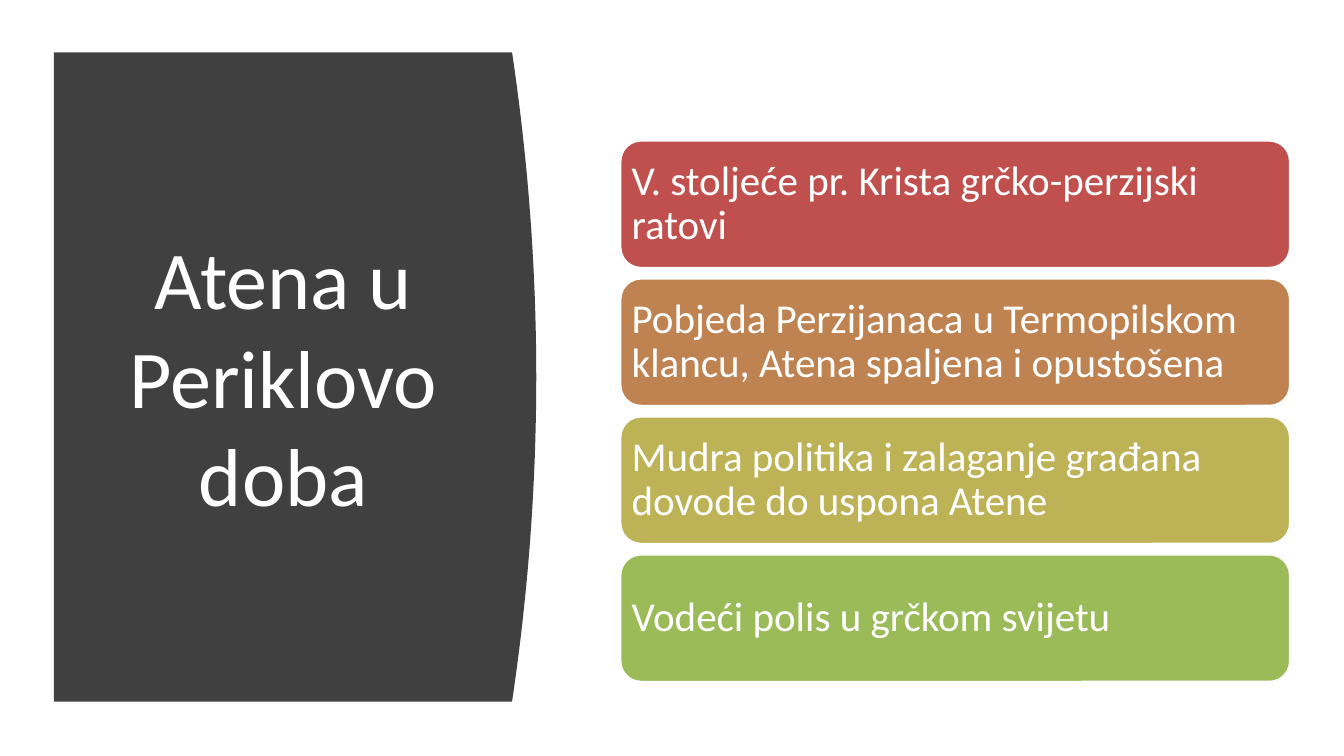
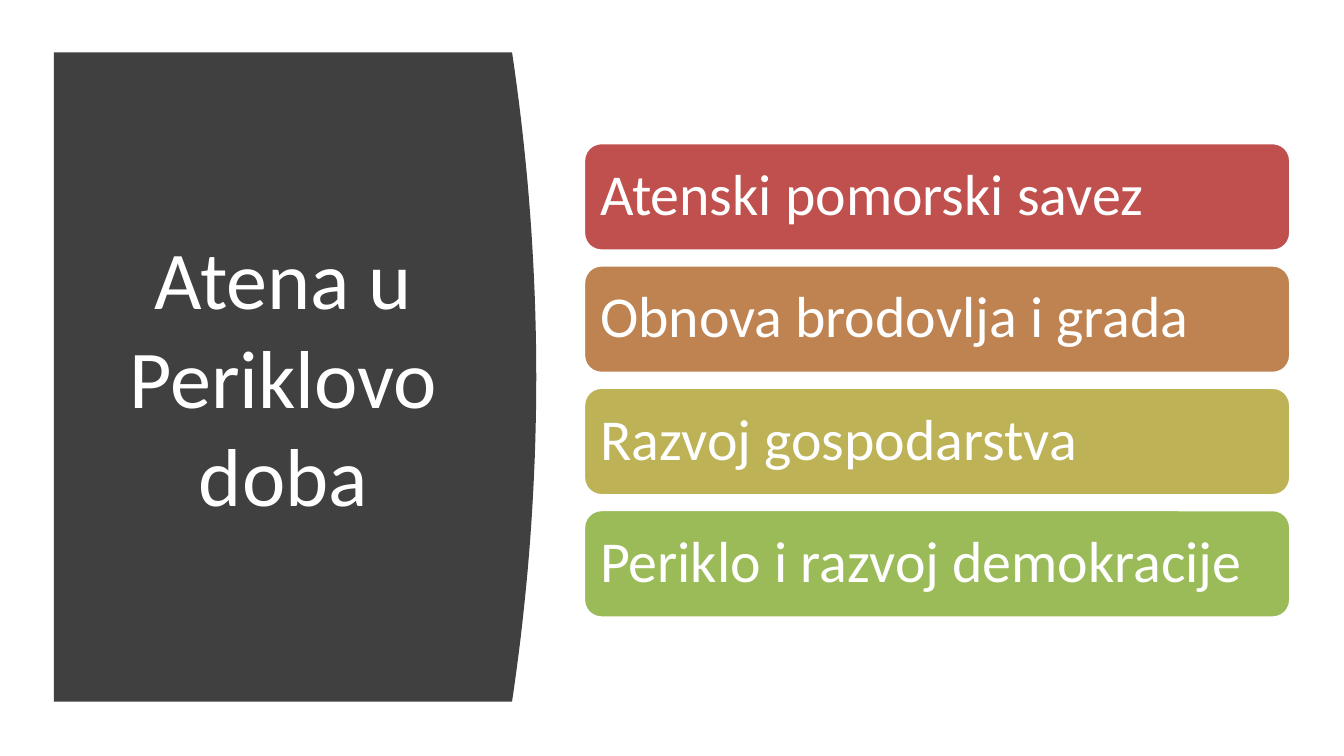
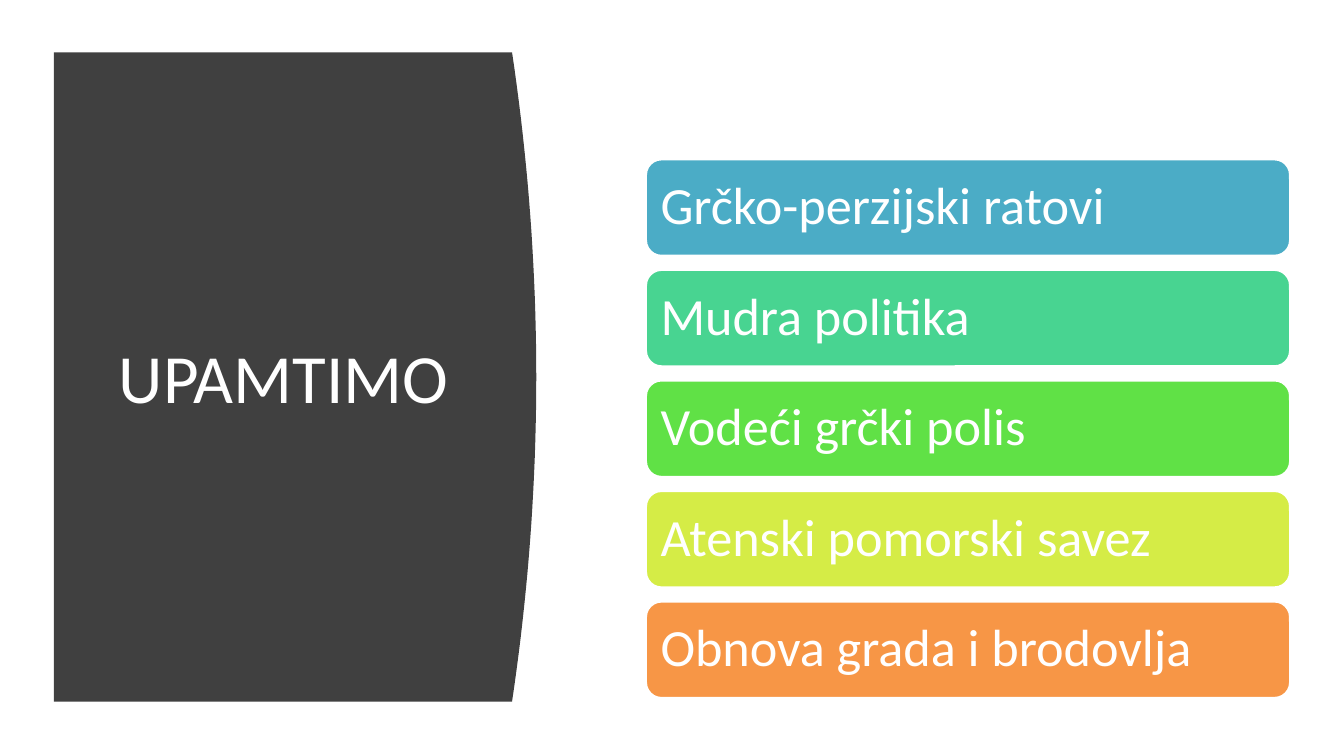
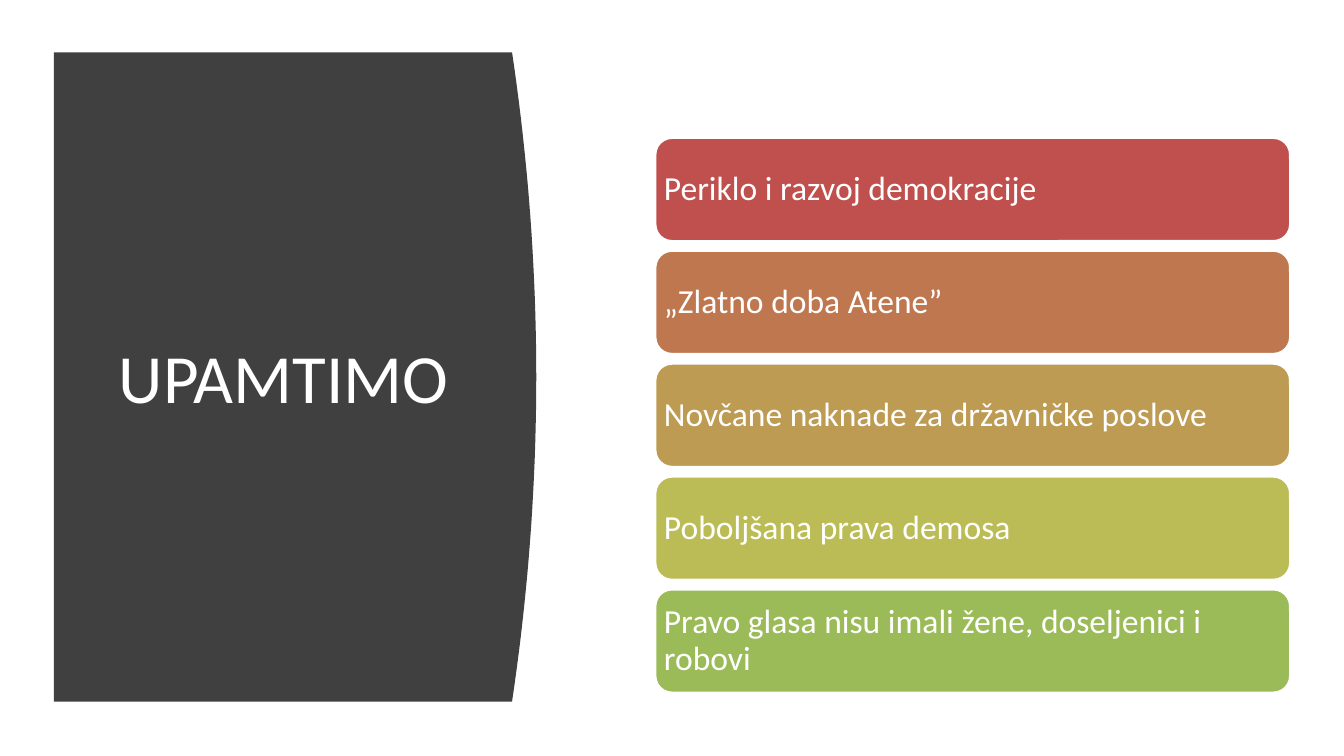
from pptx import Presentation
from pptx.dml.color import RGBColor
from pptx.enum import shapes, text
from pptx.util import Pt

PX = 4572  # EMU per px, 200 px to the inch
WIDE, HIGH = 2000, 1125
FONT = "Calibri"

WHITE = RGBColor(0xFF, 0xFF, 0xFF)
DARK = RGBColor(0x40, 0x40, 0x40)
RED = RGBColor(0xC0, 0x50, 0x4D)
RUST = RGBColor(0xBF, 0x77, 0x50)
BROWN = RGBColor(0xBE, 0x83, 0x51)
OCHRE = RGBColor(0xBD, 0x9B, 0x53)
SAND = RGBColor(0xBD, 0xB2, 0x55)
OLIVE = RGBColor(0xBC, 0xBC, 0x56)
GREEN = RGBColor(0x9B, 0xBB, 0x59)
BLUE = RGBColor(0x4B, 0xAC, 0xC6)
MINT = RGBColor(0x48, 0xD4, 0x91)
LIME = RGBColor(0x60, 0xE1, 0x46)
YELLOW = RGBColor(0xD5, 0xEC, 0x46)
ORANGE = RGBColor(0xF7, 0x96, 0x46)

WARM4 = [RED, BROWN, SAND, GREEN]
WARM5 = [RED, RUST, OCHRE, OLIVE, GREEN]
BRIGHT = [BLUE, MINT, LIME, YELLOW, ORANGE]

LEFT, TOP, EDGE, BASE = 80, 78, 762, 1044  # dark panel
BULGE, STEPS = 36, 40
RIGHT = 1921  # right edge of the bars
CORNER = 0.049  # text inset of a rounded box, as a share of its height

ATHENS = "Atena u Periklovo doba"
RECALL = "UPAMTIMO"

# title, title size, bar colours, (left, first top, last top, height), inset, size, lines
SLIDES = [
    (ATHENS, 44, WARM4, (922, 208, 824, 192), 18, 22, [
        "V. stoljeće pr. Krista grčko-perzijski ratovi",
        "Pobjeda Perzijanaca u Termopilskom klancu, Atena spaljena i opustošena",
        "Mudra politika i zalaganje građana dovode do uspona Atene",
        "Vodeći polis u grčkom svijetu",
    ]),
    (ATHENS, 44, WARM4, (868, 212, 758, 162), 25, 31, [
        "Atenski pomorski savez",
        "Obnova brodovlja i grada",
        "Razvoj gospodarstva",
        "Periklo i razvoj demokracije",
    ]),
    (RECALL, 37, BRIGHT, (960, 236, 894, 146), 23, 28, [
        "Grčko-perzijski ratovi",
        "Mudra politika",
        "Vodeći grčki polis",
        "Atenski pomorski savez",
        "Obnova grada i brodovlja",
    ]),
    (RECALL, 37, WARM5, (974, 204, 876, 156), 14, 18, [
        "Periklo i razvoj demokracije",
        "„Zlatno doba Atene”",
        "Novčane naknade za državničke poslove",
        "Poboljšana prava demosa",
        "Pravo glasa nisu imali žene, doseljenici i robovi",
    ]),
]


def emu(*lengths):
    return [round(n * PX) for n in lengths]


def write(shape, words, size, align):
    frame = shape.text_frame
    frame.text = words
    frame.word_wrap = True
    frame.vertical_anchor = text.MSO_ANCHOR.MIDDLE
    para = frame.paragraphs[0]
    para.alignment = align
    font = para.runs[0].font
    font.name, font.size, font.color.rgb = FONT, Pt(size), WHITE
    return para


def add_panel(slide):
    """Dark panel whose right side bows outwards."""
    steps = [n / STEPS for n in range(STEPS + 1)]
    bow = [(EDGE + 4 * BULGE * t * (1 - t), TOP + (BASE - TOP) * t) for t in steps]
    pen = slide.shapes.build_freeform(*emu(LEFT, TOP))
    pen.add_line_segments([emu(*point) for point in bow + [(LEFT, BASE)]])
    panel = pen.convert_to_shape()
    panel.shadow.inherit = False
    panel.fill.solid()
    panel.fill.fore_color.rgb = DARK
    panel.line.fill.background()


def add_title(slide, words, size):
    box = slide.shapes.add_textbox(*emu(142, 166, 560, 786))
    write(box, words, size, text.PP_ALIGN.CENTER)


def add_bar(slide, place, color, words, size, inset):
    bar = slide.shapes.add_shape(shapes.MSO_SHAPE.ROUNDED_RECTANGLE, *emu(*place))
    bar.shadow.inherit = False
    bar.fill.solid()
    bar.fill.fore_color.rgb = color
    bar.line.color.rgb = WHITE
    bar.line.width = Pt(2)
    write(bar, words, size, text.PP_ALIGN.LEFT).line_spacing = 0.9
    frame = bar.text_frame
    pad, = emu(inset - CORNER * place[3])
    frame.margin_left = frame.margin_right = pad
    frame.margin_top = frame.margin_bottom = pad


def add_bars(slide, colors, place, inset, size, lines):
    left, first, last, high = place
    pitch = (last - first) / (len(lines) - 1)
    for row, (color, words) in enumerate(zip(colors, lines)):
        spot = left, first + row * pitch, RIGHT - left, high
        add_bar(slide, spot, color, words, size, inset)


def main():
    deck = Presentation()
    deck.slide_width, deck.slide_height = emu(WIDE, HIGH)
    for title, big, *bars in SLIDES:
        slide = deck.slides.add_slide(deck.slide_layouts[6])
        add_panel(slide)
        add_title(slide, title, big)
        add_bars(slide, *bars)
    deck.save("out.pptx")


if __name__ == "__main__":
    main()
